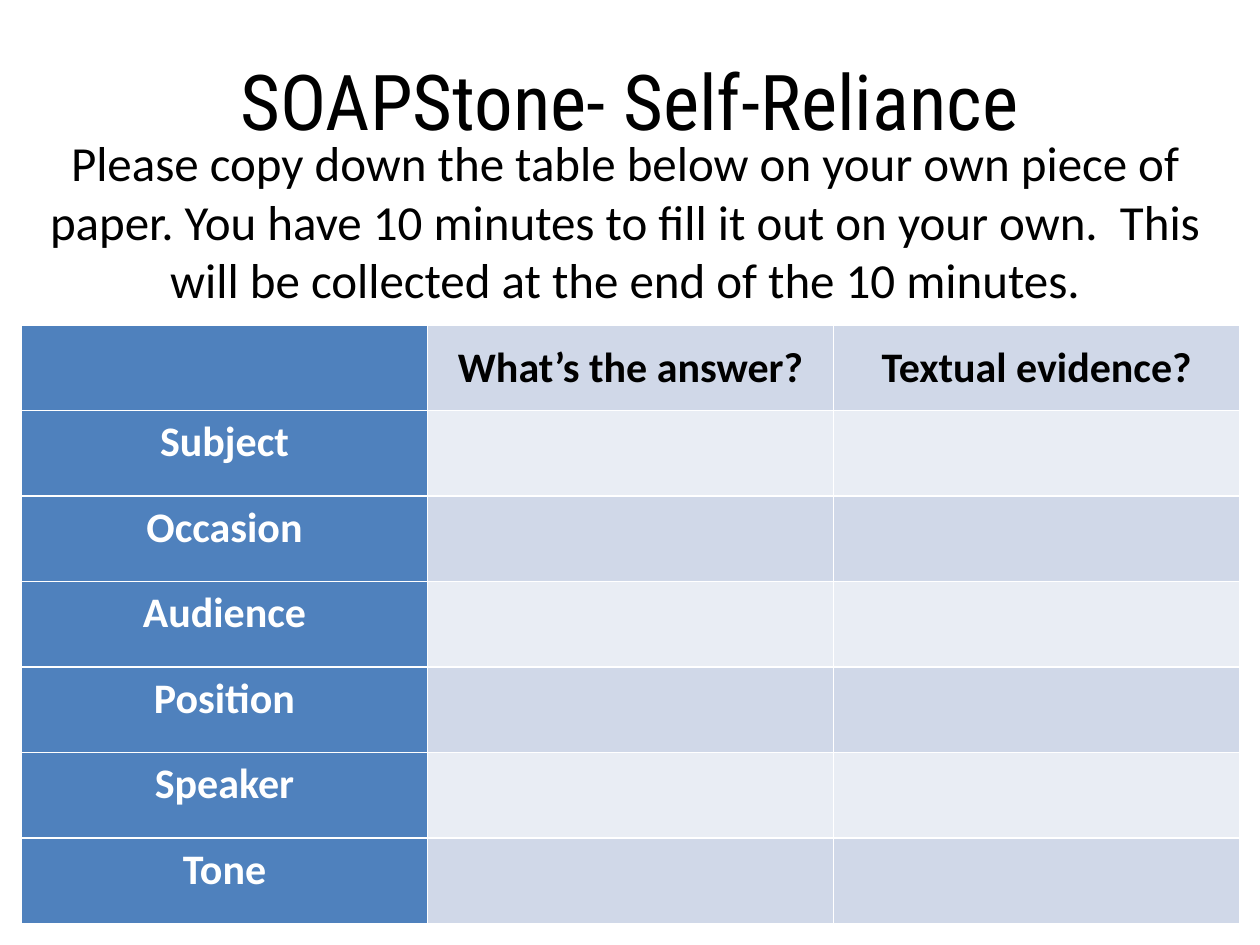
from pptx import Presentation
from pptx.dml.color import RGBColor
from pptx.enum.text import MSO_ANCHOR, PP_ALIGN
from pptx.util import Inches, Pt

CENTER = PP_ALIGN.CENTER
TOP, MIDDLE = MSO_ANCHOR.TOP, MSO_ANCHOR.MIDDLE
BLACK = RGBColor(0x00, 0x00, 0x00)
WHITE = RGBColor(0xFF, 0xFF, 0xFF)
BLUE = RGBColor(0x4F, 0x81, 0xBD)
BANDS = RGBColor(0xD0, 0xD8, 0xE8), RGBColor(0xE9, 0xED, 0xF4)

HEADS = ["", "What’s the answer?", "Textual evidence?"]
TOPICS = ["Subject", "Occasion", "Audience", "Position", "Speaker", "Tone"]
TASK = ("Please copy down the table below on your own piece of paper. "
        "You have 10 minutes to fill it out on your own.  "
        "This will be collected at the end of the 10 minutes.")


def write(frame, text, size, color=BLACK, face="Calibri", bold=False):
    """Put one centred paragraph in a text frame."""
    para = frame.paragraphs[0]
    para.text = text
    para.alignment = CENTER
    font = para.font
    font.size, font.name, font.bold = Pt(size), face, bold
    font.color.rgb = color


def add_title(slide, text):
    """Place and format the title."""
    title = slide.shapes.title
    title.left, title.top = Inches(0), Inches(0.25)
    title.width, title.height = Inches(10), Inches(1.08)
    title.text_frame.vertical_anchor = MIDDLE
    write(title.text_frame, text, 44, face="Roboto Condensed")


def add_task(slide, text):
    """Add the instructions under the title."""
    box = slide.shapes.add_textbox(
        Inches(0.17), Inches(1), Inches(9.58), Inches(1.51))
    box.text_frame.word_wrap = True
    write(box.text_frame, text, 28)


def add_grid(slide, rows):
    """Add the table with a blue first column and banded rows."""
    table = slide.shapes.add_table(
        len(rows), len(rows[0]), Inches(0.17), Inches(2.58),
        Inches(9.67), Inches(4.75)).table
    table.first_row = table.horz_banding = False
    for r, row in enumerate(rows):
        for c, text in enumerate(row):
            cell = table.cell(r, c)
            cell.fill.solid()
            cell.fill.fore_color.rgb = BANDS[r % 2] if c else BLUE
            cell.vertical_anchor = TOP if r else MIDDLE
            if text:
                write(cell.text_frame, text, 24,
                      BLACK if c else WHITE, bold=True)


def main():
    """Build and save the slide."""
    deck = Presentation()
    deck.slide_width, deck.slide_height = Inches(10), Inches(7.5)
    slide = deck.slides.add_slide(deck.slide_layouts[5])
    add_grid(slide, [HEADS] + [[topic, "", ""] for topic in TOPICS])
    add_title(slide, "SOAPStone- Self-Reliance")
    add_task(slide, TASK)
    deck.save("out.pptx")


if __name__ == "__main__":
    main()
